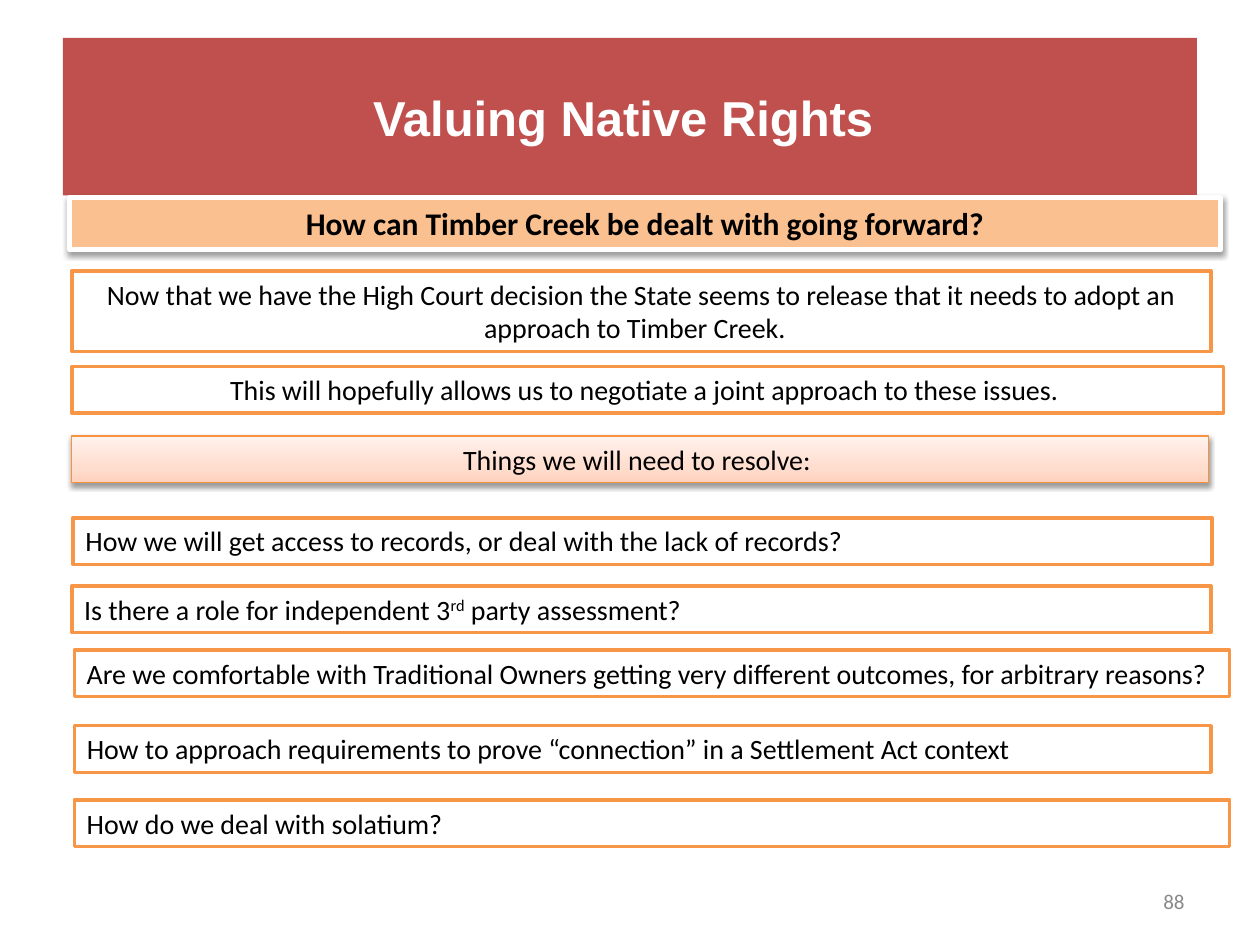
from dataclasses import dataclass

from lxml.etree import SubElement
from pptx import Presentation
from pptx.dml.color import RGBColor
from pptx.enum.shapes import MSO_SHAPE
from pptx.enum.text import MSO_ANCHOR as ANCHOR, PP_ALIGN as ALIGN
from pptx.oxml.ns import qn
from pptx.util import Inches, Pt

WHITE = RGBColor(0xFF, 0xFF, 0xFF)
BLACK = RGBColor(0x00, 0x00, 0x00)
GRAY = RGBColor(0x89, 0x89, 0x89)
RED = RGBColor(0xC0, 0x50, 0x4D)
ORANGE = RGBColor(0xF7, 0x96, 0x46)
DARK_ORANGE = RGBColor(0xF6, 0x92, 0x40)
PEACH = RGBColor(0xFA, 0xC0, 0x90)
BLUSH = (
    (0, RGBColor(0xFF, 0xD2, 0xBD)),
    (35, RGBColor(0xFF, 0xDE, 0xD0)),
    (100, RGBColor(0xFF, 0xF2, 0xED)),
)


@dataclass(frozen=True)
class Style:
    fill: RGBColor | tuple | None = WHITE
    line: RGBColor | None = ORANGE
    weight: float = 2
    size: int = 16
    color: RGBColor = BLACK
    bold: bool = False
    font: str = "Calibri"
    align: ALIGN = ALIGN.LEFT
    anchor: ANCHOR = ANCHOR.TOP
    shadow: bool = False


@dataclass(frozen=True)
class Box:
    left: float
    top: float
    width: float
    height: float
    text: str
    style: Style


TITLE = Style(RED, None, size=28, color=WHITE, bold=True, font="Arial",
              align=ALIGN.CENTER, anchor=ANCHOR.MIDDLE)
QUESTION = Style(PEACH, WHITE, 3, size=18, bold=True, align=ALIGN.CENTER, shadow=True)
STATEMENT = Style(align=ALIGN.CENTER)
HEADING = Style(BLUSH, DARK_ORANGE, 0.75, align=ALIGN.CENTER, shadow=True)
ISSUE = Style()
NUMBER = Style(None, None, size=12, color=GRAY, align=ALIGN.RIGHT, anchor=ANCHOR.MIDDLE)

ROW = 0.37
BOXES = (
    Box(0.5, 0.3, 9, 1.25, "Valuing Native Rights ", TITLE),
    Box(7.17, 6.95, 2.33, 0.4, "88", NUMBER),
    Box(0.57, 2.15, 9.04, 0.64,
        "Now that we have the High Court decision the State seems to release "
        "that it needs to adopt an approach to Timber Creek.  ", STATEMENT),
    Box(0.57, 3.46, 9.02, ROW, "Things we will need to resolve: ", HEADING),
    Box(0.55, 1.57, 9.14, 0.41,
        "How can Timber Creek be dealt with going forward?", QUESTION),
    Box(0.57, 2.91, 9.14, ROW,
        "This will hopefully allows us to negotiate a joint approach to these issues. ",
        STATEMENT),
    Box(0.58, 4.11, 9.04, ROW,
        "How we will get access to records, or deal with the lack of records?", ISSUE),
    Box(0.57, 4.65, 9.04, ROW,
        "Is there a role for independent 3^rd^ party assessment?", ISSUE),
    Box(0.59, 5.16, 9.17, ROW,
        "Are we comfortable with Traditional Owners getting very different outcomes, "
        "for arbitrary reasons?", ISSUE),
    Box(0.59, 5.76, 9.02, ROW,
        "How to approach requirements to prove “connection” in a Settlement Act context",
        ISSUE),
    Box(0.59, 6.35, 9.17, ROW, "How do we deal with solatium?", ISSUE),
)


def add_color(parent, color: RGBColor):
    return SubElement(parent, qn("a:srgbClr"), val=str(color))


def fill_gradient(sp, stops: tuple) -> None:
    sp.fill.gradient()
    sp.fill.gradient_angle = 90
    gs_list = sp._element.spPr.find(qn("a:gradFill")).find(qn("a:gsLst"))
    for gs in list(gs_list):
        gs_list.remove(gs)
    for pos, color in stops:
        add_color(SubElement(gs_list, qn("a:gs"), pos=str(pos * 1000)), color)


def add_shadow(sp) -> None:
    effects = sp._element.spPr.find(qn("a:effectLst"))
    shadow = SubElement(effects, qn("a:outerShdw"), blurRad=str(Pt(3.1)),
                        dist=str(Pt(1.6)), dir="5400000", rotWithShape="0")
    SubElement(add_color(shadow, BLACK), qn("a:alpha"), val="38000")


def add_text(sp, text: str, style: Style) -> None:
    tf = sp.text_frame
    tf.word_wrap = True
    tf.vertical_anchor = style.anchor
    p = tf.paragraphs[0]
    p.alignment = style.align
    fmt = {"name": style.font, "size": Pt(style.size), "bold": style.bold}
    for i, part in enumerate(text.split("^")):
        r = p.add_run()
        r.text = part
        for name, value in fmt.items():
            setattr(r.font, name, value)
        r.font.color.rgb = style.color
        if i % 2:
            r._r.get_or_add_rPr().set("baseline", "30000")


def add_box(slide, box: Box) -> None:
    style = box.style
    place = [Inches(v) for v in (box.left, box.top, box.width, box.height)]
    if style.fill is None:
        sp = slide.shapes.add_textbox(*place)
    else:
        sp = slide.shapes.add_shape(MSO_SHAPE.RECTANGLE, *place)
        sp.shadow.inherit = False
        if isinstance(style.fill, RGBColor):
            sp.fill.solid()
            sp.fill.fore_color.rgb = style.fill
        else:
            fill_gradient(sp, style.fill)
        if style.line is None:
            sp.line.fill.background()
        else:
            sp.line.color.rgb = style.line
            sp.line.width = Pt(style.weight)
        if style.shadow:
            add_shadow(sp)
    add_text(sp, box.text, style)


def main() -> None:
    prs = Presentation()
    prs.slide_width, prs.slide_height = Inches(10), Inches(7.5)
    slide = prs.slides.add_slide(prs.slide_layouts[6])
    for box in BOXES:
        add_box(slide, box)
    prs.save("out.pptx")


if __name__ == "__main__":
    main()
